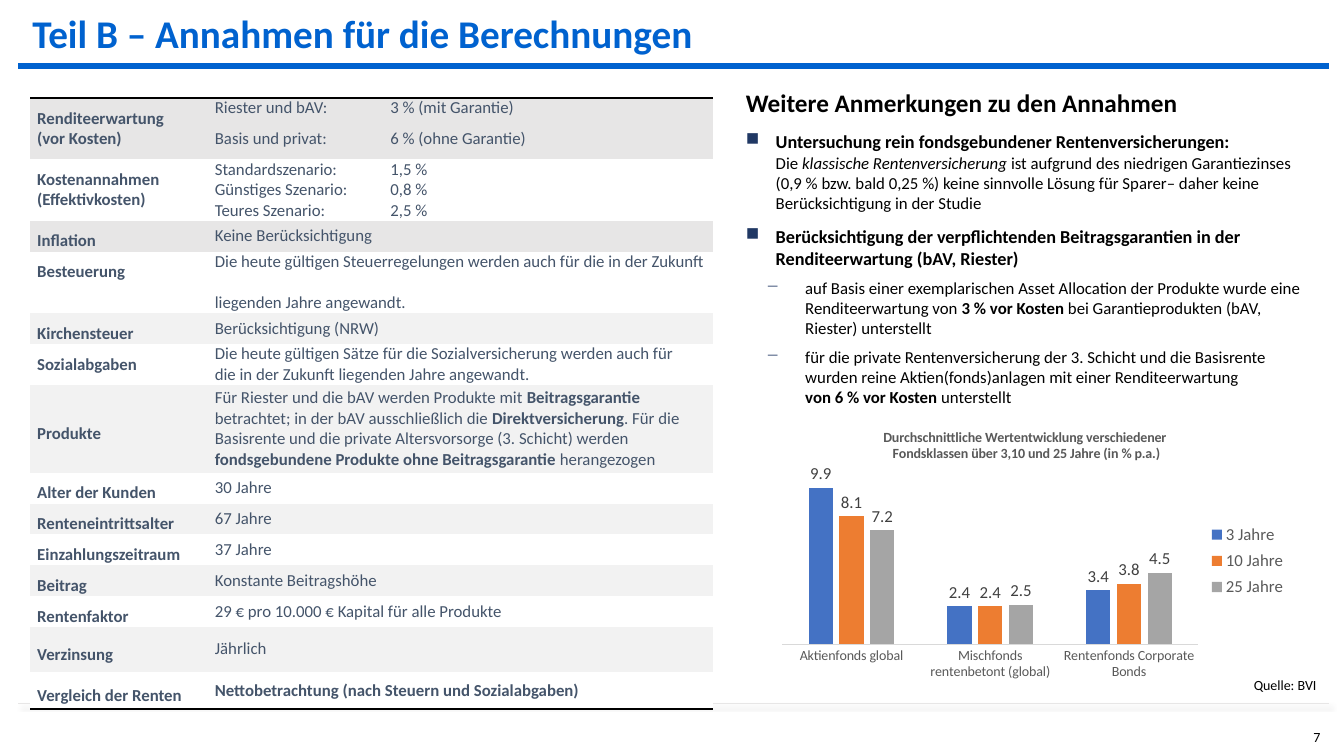
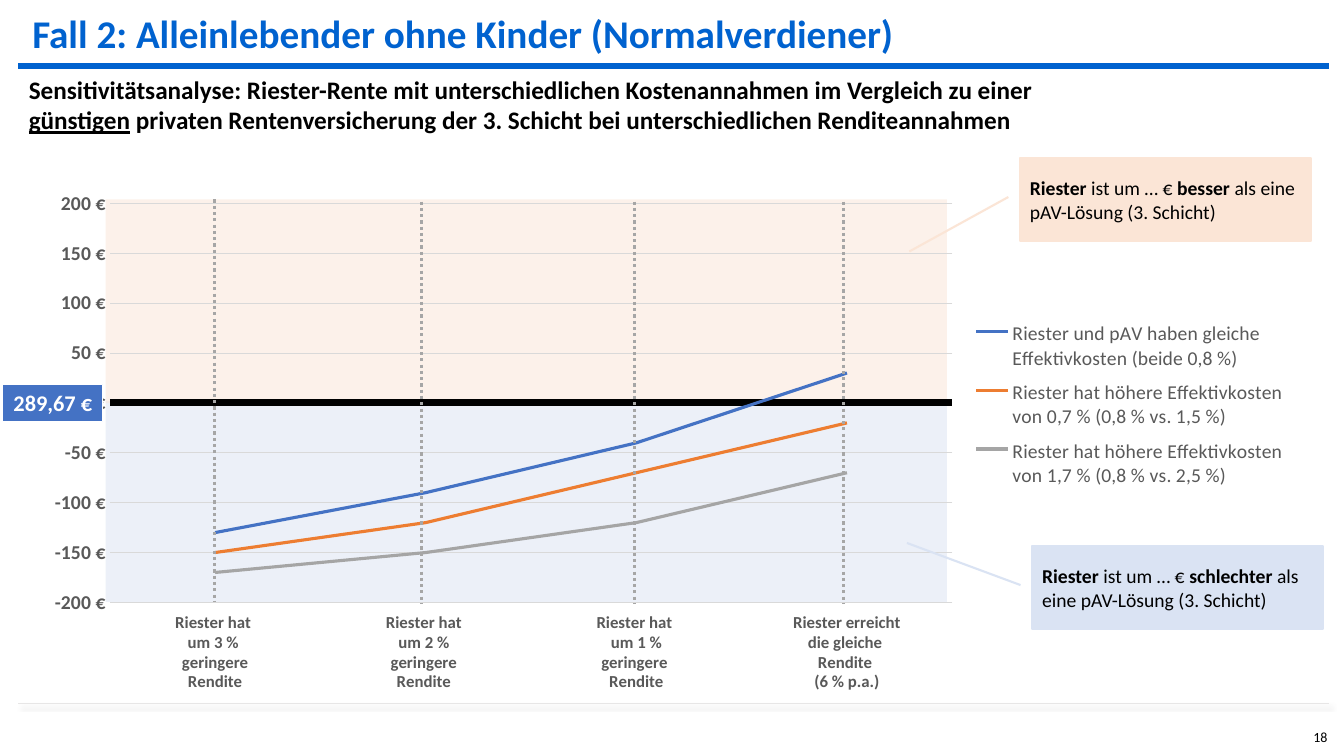
import copy
import lxml.etree
import pptx
import pptx.chart.data
import pptx.dml.color
import pptx.enum.chart
import pptx.enum.dml
import pptx.enum.shapes
import pptx.enum.text
import pptx.oxml.ns
import pptx.util

Pt = pptx.util.Pt
qn = pptx.oxml.ns.qn
Shapes = pptx.enum.shapes.MSO_SHAPE
Anchor = pptx.enum.text.MSO_ANCHOR
Align = pptx.enum.text.PP_ALIGN
FONT = "Calibri"
COLORS = {
    "title": "0062CF", "black": "000000", "white": "FFFFFF", "rule": "E7E6E6",
    "slate": "44546A", "stripe": "F2F2F2", "bullet": "203864", "axis": "595959",
    "label": "404040", "grid": "D9D9D9", "dots": "A6A6A6", "better": "FBE5D6",
    "worse": "DAE3F3", "blue": "4472C4", "orange": "ED7D31", "gray": "A5A5A5",
}
SERIES = ("blue", "orange", "gray")
BOLD = {"bold": True}


def rgb(name):
    return pptx.dml.color.RGBColor.from_string(COLORS[name])


def points(values):
    return [Pt(value) for value in values]


def add_xml(parent, tag, **attributes):
    return lxml.etree.SubElement(parent, qn(tag), attributes)


def style(font, values):
    for name, value in {"name": FONT, **values}.items():
        if name == "color":
            font.color.rgb = rgb(value)
        else:
            setattr(font, name, Pt(value) if name == "size" else value)


def write(para, spans, base):
    for text, changes in [(spans, {})] if isinstance(spans, str) else spans:
        for number, piece in enumerate(text.split("\n")):
            if number:
                mark = copy.deepcopy(para.runs[-1]._r.rPr)
                para.add_line_break()
                para._p[-1].append(mark)
            if piece:
                span = para.add_run()
                span.text = piece
                style(span.font, {**base, **changes})


def add_text(page, box, spans, wrap=True, **base):
    shape = page.shapes.add_textbox(*points(box))
    shape.text_frame.word_wrap = wrap
    write(shape.text_frame.paragraphs[0], spans, {"color": "black", **base})
    return shape.text_frame


def add_block(page, kind, box, fill, line=None, width=1, alpha=None):
    shape = page.shapes.add_shape(kind, *points(box))
    shape.shadow.inherit = False
    shape.fill.solid()
    shape.fill.fore_color.rgb = rgb(fill)
    if alpha:
        color = shape._element.spPr.find(qn("a:solidFill"))[0]
        add_xml(color, "a:alpha", val=str(alpha * 1000))
    if line:
        shape.line.color.rgb = rgb(line)
        shape.line.width = Pt(width)
    else:
        shape.line.fill.background()
    return shape


def add_line(page, ends, color, width):
    line = page.shapes.add_connector(
        pptx.enum.shapes.MSO_CONNECTOR.STRAIGHT, *points(ends))
    line.line.color.rgb = rgb(color)
    line.line.width = Pt(width)
    return line, add_xml(line._element.spPr, "a:effectLst")


def add_page(deck, title, number):
    page = deck.slides.add_slide(deck.slide_layouts[6])
    add_line(page, (13, 47, 949, 47), "title", 4.5)
    effects = add_line(page, (13, 502.5, 949, 502.5), "rule", 1)[1]
    shadow = add_xml(effects, "a:outerShdw", blurRad=str(Pt(3)), dist=str(Pt(3)),
                     dir="2700000", algn="tl", rotWithShape="0")
    add_xml(add_xml(shadow, "a:srgbClr", val=COLORS["black"]), "a:alpha", val="40000")
    add_text(page, (16, 3, 929, 41), title, size=28, bold=True, color="title")
    add_text(page, (931, 517, 38, 22), number, size=10)
    return page


def set_layout(parent, index, x, y, w=None, h=None):
    for old in parent.findall(qn("c:layout")):
        parent.remove(old)
    layout = lxml.etree.Element(qn("c:layout"))
    parent.insert(index, layout)
    manual = add_xml(layout, "c:manualLayout")
    if index == 0:
        add_xml(manual, "c:layoutTarget", val="inner")
    for mode in "xy":
        add_xml(manual, f"c:{mode}Mode", val="edge")
    for name, value in zip("xywh", (x, y, w, h)):
        if value is not None:
            add_xml(manual, f"c:{name}", val=str(value))


def add_chart(page, box, kind, categories, series, plot, legend, legend_size):
    data = pptx.chart.data.CategoryChartData()
    data.categories = categories
    for name, values in series:
        data.add_series(name, values)
    chart = page.shapes.add_chart(kind, *points(box), data).chart
    style(chart.font, {"size": 10, "color": "black"})
    chart.has_title = False
    chart.has_legend = True
    chart.legend.position = pptx.enum.chart.XL_LEGEND_POSITION.RIGHT
    chart.legend.include_in_layout = False
    style(chart.legend.font, {"size": legend_size, "color": "axis"})
    set_layout(chart.legend._element, 1, *legend)
    set_layout(chart._chartSpace.chart.plotArea, 0, *plot)
    chart.plots[0].vary_by_categories = False
    for axis in (chart.category_axis, chart.value_axis):
        axis.major_tick_mark = pptx.enum.chart.XL_TICK_MARK.NONE
        axis.has_major_gridlines = False
    return chart


ASSUMPTIONS = [
    (14.7, "rule", "Renditeerwartung \n(vor Kosten)", ("Riester und bAV:", "3 % (mit Garantie)")),
    (29, "rule", None, ("Basis und privat:", "6 % (ohne Garantie)")),
    (14.7, "white", "Kostenannahmen\n(Effektivkosten)", ("Standardszenario:", "1,5 %")),
    (14.7, "white", None, ("Günstiges Szenario:", "0,8 %")),
    (14.7, "white", None, ("Teures Szenario:", "2,5 %")),
    (22, "rule", "Inflation", "Keine Berücksichtigung"),
    (44, "white", "Besteuerung", "Die heute gültigen Steuerregelungen werden auch für die "
     "in der Zukunft \nliegenden Jahre angewandt."),
    (22, "stripe", "Kirchensteuer", "Berücksichtigung (NRW)"),
    (29.3, "white", "Sozialabgaben", "Die heute gültigen Sätze für die Sozialversicherung "
     "werden auch für \ndie in der Zukunft liegenden Jahre angewandt."),
    (62.7, "stripe", "Produkte", [
        ("Für Riester und die bAV werden Produkte mit ", {}), ("Beitragsgarantie", BOLD),
        (" betrachtet; in der bAV ausschließlich die ", {}), ("Direktversicherung", BOLD),
        (". Für die Basisrente und die private Altersvorsorge (3. Schicht) werden ", {}),
        ("fondsgebundene Produkte ohne Beitragsgarantie ", BOLD), ("herangezogen", {})]),
    (22, "white", "Alter der Kunden", "30 Jahre"),
    (22, "stripe", "Renteneintrittsalter", "67 Jahre"),
    (22, "white", "Einzahlungszeitraum", "37 Jahre"),
    (22, "stripe", "Beitrag", "Konstante Beitragshöhe"),
    (22, "white", "Rentenfaktor", "29 € pro 10.000 € Kapital für alle Produkte"),
    (32.2, "stripe", "Verzinsung", "Jährlich"),
    (26.6, "white", "Vergleich der Renten",
     [("Nettobetrachtung (nach Steuern und Sozialabgaben)", BOLD)]),
]
TOP_LABELS = ("Inflation", "Besteuerung", "Kirchensteuer", "Sozialabgaben")


def add_border(cell, side):
    edge = lxml.etree.Element(qn(f"a:{side}"), {"w": str(Pt(2))})
    add_xml(add_xml(edge, "a:solidFill"), "a:srgbClr", val=COLORS["black"])
    cell._tc.get_or_add_tcPr().insert(0, edge)


def assumptions_table(page, box):
    table = page.shapes.add_table(len(ASSUMPTIONS), 3, *points(box)).table
    table._tbl.tblPr.find(qn("a:tableStyleId")).text = "{2D5ABB26-0587-4C30-8999-92F81FD0307C}"
    table.first_row = table.horz_banding = False
    for column, share in zip(table.columns, (0.26, 0.257, 0.483)):
        column.width = Pt(round(box[2] * share, 1))
    last = len(ASSUMPTIONS) - 1
    for row, (height, fill, label, value) in enumerate(ASSUMPTIONS):
        table.rows[row].height = Pt(height)
        texts = (label, *value) if isinstance(value, tuple) else (label, value, None)
        for col, text in enumerate(texts):
            cell = table.cell(row, col)
            cell.margin_left = cell.margin_right = Pt(5)
            cell.margin_top = cell.margin_bottom = 0
            cell.vertical_anchor = Anchor.TOP if text in TOP_LABELS else Anchor.MIDDLE
            cell.fill.solid()
            cell.fill.fore_color.rgb = rgb(fill)
            para = cell.text_frame.paragraphs[0]
            if text:
                write(para, text, {"size": 12, "color": "slate", "bold": col == 0})
            if col == 0 and row >= 5:
                para.line_spacing = 1.5
            add_xml(para._p, "a:endParaRPr", sz="1200")
            if row in (0, last):
                add_border(cell, "lnB" if row else "lnT")
        if texts[2] is None:
            table.cell(row, 1).merge(table.cell(row, 2))
    for first, final in ((0, 1), (2, 4)):
        table.cell(first, 0).merge(table.cell(final, 0))


NOTES = [
    ("■", 9, [("Untersuchung rein fondsgebundener Rentenversicherungen:\n", {"size": 13, **BOLD}),
              ("Die ", {}), ("klassische Rentenversicherung ", {"italic": True}),
              ("ist aufgrund des niedrigen Garantiezinses (0,9 % bzw. bald 0,25 %) keine sinnvolle "
               "Lösung für Sparer– daher keine Berücksichtigung in der Studie", {})]),
    ("■", 6, [("Berücksichtigung der verpflichtenden Beitragsgarantien in der Renditeerwartung "
               "(bAV, Riester)", {"size": 13, **BOLD})]),
    ("−", 6, [("auf Basis einer exemplarischen Asset Allocation der Produkte wurde eine "
               "Renditeerwartung von ", {}), ("3 % vor Kosten ", BOLD),
              ("bei Garantieprodukten (bAV, Riester) unterstellt", {})]),
    ("−", 6, [("für die private Rentenversicherung der 3. Schicht und die Basisrente wurden reine "
               "Aktien(fonds)anlagen mit einer Renditeerwartung \n", {}),
              ("von 6 % vor Kosten ", BOLD), ("unterstellt", {})]),
]
INDENTS = {"■": (0, 21.4, -21.4), "−": (1, 42.5, -28)}


def notes_text(page, box):
    frame = add_text(page, box, "Weitere Anmerkungen zu den Annahmen", size=18, bold=True)
    frame.paragraphs[0].space_after = Pt(9)
    for bullet, after, spans in NOTES:
        para = frame.add_paragraph()
        para.level, left, hang = INDENTS[bullet]
        props = para._p.get_or_add_pPr()
        props.set("marL", str(Pt(left)))
        props.set("indent", str(Pt(hang)))
        add_xml(add_xml(props, "a:buClr"), "a:srgbClr", val=COLORS["bullet"])
        add_xml(props, "a:buChar", char=bullet)
        para.space_after = Pt(after)
        write(para, spans, {"size": 12, "color": "black"})


def funds_chart(page, box):
    chart = add_chart(
        page, box, pptx.enum.chart.XL_CHART_TYPE.COLUMN_CLUSTERED,
        ["Aktienfonds global", "Mischfonds rentenbetont (global)", "Rentenfonds Corporate Bonds"],
        [("3 Jahre", (9.9, 2.4, 3.4)), ("10 Jahre", (8.1, 2.4, 3.8)), ("25 Jahre", (7.2, 2.5, 4.5))],
        (0.08, 0.26, 0.72, 0.54), (0.8, 0.37, 0.17, 0.29), 12)
    write(chart.chart_title.text_frame.paragraphs[0],
          "Durchschnittliche Wertentwicklung verschiedener \n"
          "Fondsklassen über 3,10 und 25 Jahre (in % p.a.)",
          {"size": 10, "bold": True, "color": "axis"})
    set_layout(chart.chart_title._element, 1, 0.25, 0.05)
    chart.value_axis.visible = False
    chart.value_axis.minimum_scale, chart.value_axis.maximum_scale = 0, 10
    style(chart.category_axis.tick_labels.font, {"size": 10, "color": "axis"})
    chart.category_axis.format.line.color.rgb = rgb("grid")
    chart.category_axis.format.line.width = Pt(0.75)
    chart.plots[0].gap_width, chart.plots[0].overlap = 219, -27
    for series, color in zip(chart.plots[0].series, SERIES):
        series.format.fill.solid()
        series.format.fill.fore_color.rgb = rgb(color)
        labels = series.data_labels
        labels.show_value = True
        labels.position = pptx.enum.chart.XL_LABEL_POSITION.OUTSIDE_END
        style(labels.font, {"size": 12, "color": "label"})


def sensitivity_chart(page, box):
    left, top = box[:2]
    for offset, height, fill in ((161.5, 143.5, "worse"), (17.5, 145.5, "better")):
        add_block(page, Shapes.RECTANGLE, (left + 51.5, top + offset, 601, height), fill, alpha=50)
    chart = add_chart(
        page, box, pptx.enum.chart.XL_CHART_TYPE.LINE,
        ["Riester hat \num 3 % \ngeringere\nRendite", "Riester hat \num 2 % \ngeringere \nRendite ",
         "Riester hat \num 1 %\ngeringere \nRendite",
         "Riester erreicht\ndie gleiche \nRendite \n(6 % p.a.)"],
        [("Riester und pAV haben gleiche \nEffektivkosten (beide 0,8 %)", (-130, -90, -40, 30)),
         ("Riester hat höhere Effektivkosten \nvon 0,7 % (0,8 % vs. 1,5 %)", (-150, -120, -70, -20)),
         ("Riester hat höhere Effektivkosten\nvon 1,7 % (0,8 % vs. 2,5 %)", (-170, -150, -120, -70))],
        (0.059, 0.052, 0.652, 0.729), (0.72, 0.25, 0.26, 0.34), 14)
    values, names = chart.value_axis, chart.category_axis
    values.minimum_scale, values.maximum_scale, values.major_unit = -200, 200, 50
    values.has_major_gridlines = True
    values.major_gridlines.format.line.color.rgb = rgb("grid")
    values.major_gridlines.format.line.width = Pt(0.75)
    values.format.line.fill.background()
    values.tick_labels.number_format = '#,##0\\ "€"'
    values.tick_labels.number_format_is_linked = False
    names.tick_label_position = pptx.enum.chart.XL_TICK_LABEL_POSITION.LOW
    names.format.line.color.rgb = rgb("black")
    names.format.line.width = Pt(5)
    for axis, size in ((values, 14), (names, 12)):
        style(axis.tick_labels.font, {"size": size, "bold": True, "color": "axis"})
    for series, color in zip(chart.plots[0].series, SERIES):
        series.smooth = False
        series.marker.style = pptx.enum.chart.XL_MARKER_STYLE.NONE
        series.format.line.color.rgb = rgb(color)
        series.format.line.width = Pt(2.25)
    for offset, drop in ((129.4, 17.5), (277, 19), (429, 19), (578.6, 19)):
        x, y = left + offset, top + drop
        dots = add_line(page, (x, y, x, y + 287.3), "dots", 2.25)[0]
        dots.line.dash_style = pptx.enum.dml.MSO_LINE.ROUND_DOT


def callout(page, box, color, verdict, pointer):
    shape = add_block(page, Shapes.LINE_CALLOUT_1, box, color, color, 1.5)
    for number, value in enumerate((0.47, -0.04, *pointer)):
        shape.adjustments[number] = value
    frame = shape.text_frame
    frame.word_wrap = True
    frame.vertical_anchor = Anchor.MIDDLE
    frame.paragraphs[0].alignment = Align.LEFT
    write(frame.paragraphs[0], [("Riester", BOLD), (" ist um … € ", {}), (verdict, BOLD),
                                (" als eine pAV-Lösung (3. Schicht)", {})],
          {"size": 14, "color": "black"})


def baseline_tag(page, box):
    frame = add_block(page, Shapes.RECTANGLE, box, "blue", "white", 0.75).text_frame
    frame.word_wrap = False
    frame.vertical_anchor = Anchor.MIDDLE
    frame.paragraphs[0].alignment = Align.CENTER
    write(frame.paragraphs[0], "289,67 €", {"size": 16, "bold": True, "color": "white"})


def main():
    deck = pptx.Presentation()
    deck.slide_width, deck.slide_height = Pt(960), Pt(540)
    page = add_page(deck, "Teil B – Annahmen für die Berechnungen", "7")
    assumptions_table(page, (21.6, 70, 488, 437))
    notes_text(page, (525.6, 59, 419, 238))
    funds_chart(page, (525.6, 293, 413, 209))
    add_text(page, (888.5, 479.5, 60.5, 22), "Quelle: BVI", wrap=False, size=10)
    page = add_page(deck, "Fall 2: Alleinlebender ohne Kinder (Normalverdiener)", "18")
    sensitivity_chart(page, (24, 125, 923, 391))
    callout(page, (728.6, 113, 208, 59), "better", "besser", (1.13, -0.38))
    callout(page, (737.3, 390.2, 208, 59), "worse", "schlechter", (-0.04, -0.43))
    add_text(page, (13.5, 49.5, 806, 51), [
        ("Sensitivitätsanalyse: Riester-Rente mit unterschiedlichen Kostenannahmen im Vergleich "
         "zu einer ", {}), ("günstigen", {"underline": True}),
        (" privaten Rentenversicherung der 3. Schicht bei unterschiedlichen Renditeannahmen", {})],
        size=18, bold=True)
    baseline_tag(page, (2, 274.5, 71.5, 26.5))
    deck.save("out.pptx")


if __name__ == "__main__":
    main()
